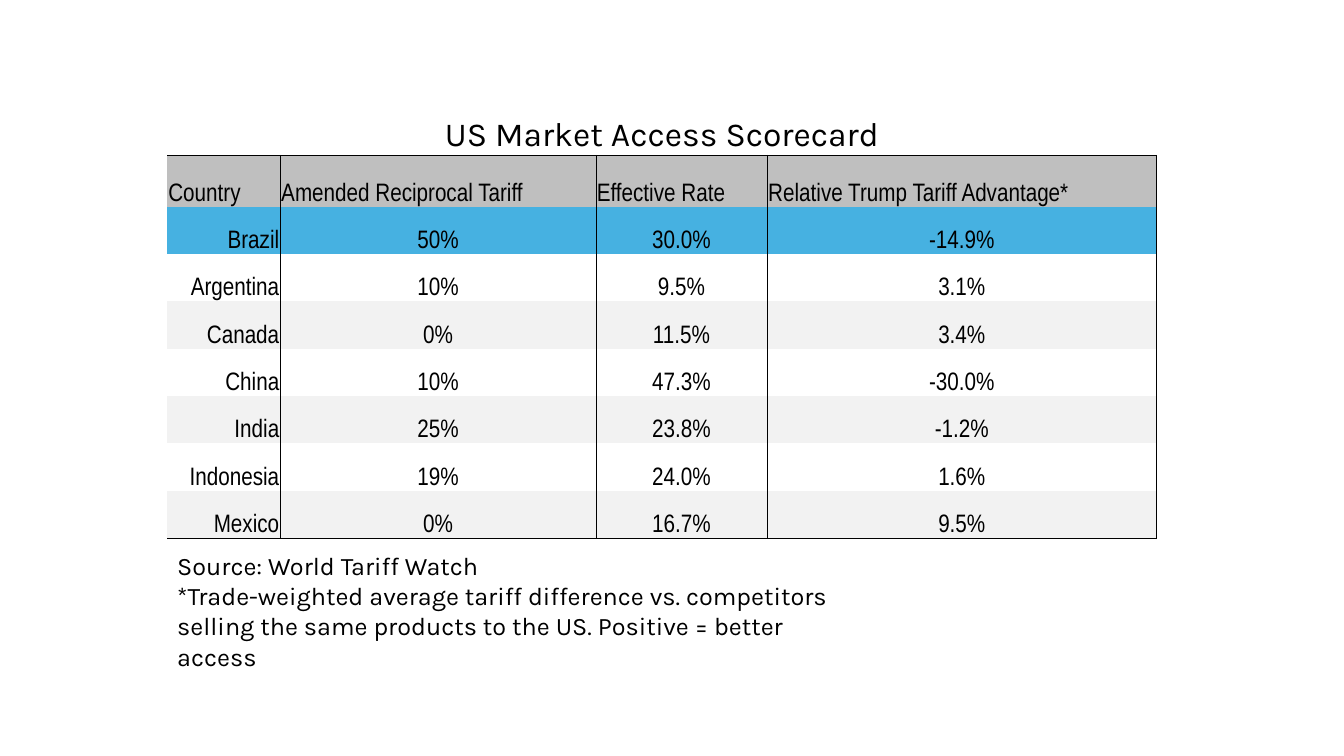
from dataclasses import dataclass

from lxml import etree
from pptx import Presentation
from pptx import util as u
from pptx.dml.color import RGBColor
from pptx.enum import text
from pptx.oxml import ns

COLORS = {
    "ink": "000000",
    "header": "BFBFBF",
    "highlight": "46B1E1",
    "band": "F2F2F2",
}
TITLE_FONT, TABLE_FONT = "Karla", "Arial Narrow"
NO_STYLE = "{2D5ABB26-0587-4C30-8999-92F81FD0307C}"
LEFT, CENTER, RIGHT = text.PP_ALIGN.LEFT, text.PP_ALIGN.CENTER, text.PP_ALIGN.RIGHT


@dataclass(frozen=True)
class CountryRow:
    country: str
    reciprocal: str
    effective: str
    advantage: str
    fill: str | None = None

    def values(self) -> list[str]:
        return [self.country, self.reciprocal, self.effective, self.advantage]


TITLE = "US Market Access Scorecard"
HEADER = CountryRow("Country", "Amended Reciprocal Tariff", "Effective Rate",
                    "Relative Trump Tariff Advantage*", "header")
COUNTRIES = [
    CountryRow("Brazil", "50%", "30.0%", "-14.9%", "highlight"),
    CountryRow("Argentina", "10%", "9.5%", "3.1%"),
    CountryRow("Canada", "0%", "11.5%", "3.4%", "band"),
    CountryRow("China", "10%", "47.3%", "-30.0%"),
    CountryRow("India", "25%", "23.8%", "-1.2%", "band"),
    CountryRow("Indonesia", "19%", "24.0%", "1.6%"),
    CountryRow("Mexico", "0%", "16.7%", "9.5%", "band"),
]
NOTES = [
    "Source: World Tariff Watch",
    "*Trade-weighted average tariff difference vs. competitors selling "
    "the same products to the US. Positive = better access",
]
COLUMN_WIDTHS = [1.12, 3.13, 1.7, 3.86]
ROW_HEIGHTS = [0.58, 0.51] + [0.47] * len(COUNTRIES)


def write(frame, lines: list[str], *, font: str, size: float = 18,
          align=LEFT, color: str = "ink") -> None:
    """Fill a text frame with one paragraph per line."""
    for index, line in enumerate(lines):
        para = frame.add_paragraph() if index else frame.paragraphs[0]
        para.alignment = align
        span = para.add_run()
        span.text = line
        span.font.name = font
        span.font.size = u.Pt(size)
        span.font.color.rgb = RGBColor.from_string(COLORS[color])


def add_borders(cell, sides: str) -> None:
    """Draw thin borders on the given sides, out of L, R, T and B."""
    properties = cell._tc.get_or_add_tcPr()
    for side in "LRTB":
        line = etree.SubElement(properties, ns.qn(f"a:ln{side}"))
        if side not in sides:
            etree.SubElement(line, ns.qn("a:noFill"))
            continue
        line.set("w", str(u.Pt(0.5)))
        fill = etree.SubElement(line, ns.qn("a:solidFill"))
        etree.SubElement(fill, ns.qn("a:srgbClr")).set("val", COLORS["ink"])


def format_cell(cell, *, sides: str, fill: str | None = None) -> None:
    cell.margin_left = cell.margin_right = cell.margin_top = u.Inches(0.01)
    cell.margin_bottom = 0
    cell.vertical_anchor = text.MSO_ANCHOR.BOTTOM
    add_borders(cell, sides)
    if fill:
        cell.fill.solid()
        cell.fill.fore_color.rgb = RGBColor.from_string(COLORS[fill])
    else:
        cell.fill.background()


def add_scorecard(page) -> None:
    frame = page.shapes.add_table(
        len(ROW_HEIGHTS), len(COLUMN_WIDTHS), u.Inches(1.66), u.Inches(0.96),
        u.Inches(sum(COLUMN_WIDTHS)), u.Inches(sum(ROW_HEIGHTS)))
    table = frame.table
    table.first_row = table.horz_banding = False
    table._tbl.tblPr.find(ns.qn("a:tableStyleId")).text = NO_STYLE
    for column, width in zip(table.columns, COLUMN_WIDTHS):
        column.width = u.Inches(width)
    for row, height in zip(table.rows, ROW_HEIGHTS):
        row.height = u.Inches(height)

    # Title across all columns
    for cell in table.rows[0].cells:
        format_cell(cell, sides="B")
    title = table.cell(0, 0)
    title.merge(table.cell(0, len(COLUMN_WIDTHS) - 1))
    write(title.text_frame, [TITLE], font=TITLE_FONT, size=24, align=CENTER)

    # Column heads and countries
    entries = [HEADER] + COUNTRIES
    for row_index, entry in enumerate(entries, start=1):
        for column_index, value in enumerate(entry.values()):
            cell = table.cell(row_index, column_index)
            sides = "LR" if column_index else "R"
            if entry is HEADER:
                sides += "T"
            if entry is entries[-1]:
                sides += "B"
            format_cell(cell, sides=sides, fill=entry.fill)
            if entry is HEADER:
                align = LEFT
            else:
                align = CENTER if column_index else RIGHT
            write(cell.text_frame, [value], font=TABLE_FONT, align=align)


def add_notes(page) -> None:
    box = page.shapes.add_textbox(u.Inches(1.66), u.Inches(5.41),
                                  u.Inches(6.67), u.Inches(1.01))
    box.text_frame.word_wrap = True
    box.text_frame.auto_size = text.MSO_AUTO_SIZE.SHAPE_TO_FIT_TEXT
    write(box.text_frame, NOTES, font=TITLE_FONT)


def main() -> None:
    deck = Presentation()
    deck.slide_width, deck.slide_height = u.Inches(13.33), u.Inches(7.5)
    page = deck.slides.add_slide(deck.slide_layouts[6])
    add_scorecard(page)
    add_notes(page)
    deck.save("out.pptx")


if __name__ == "__main__":
    main()
